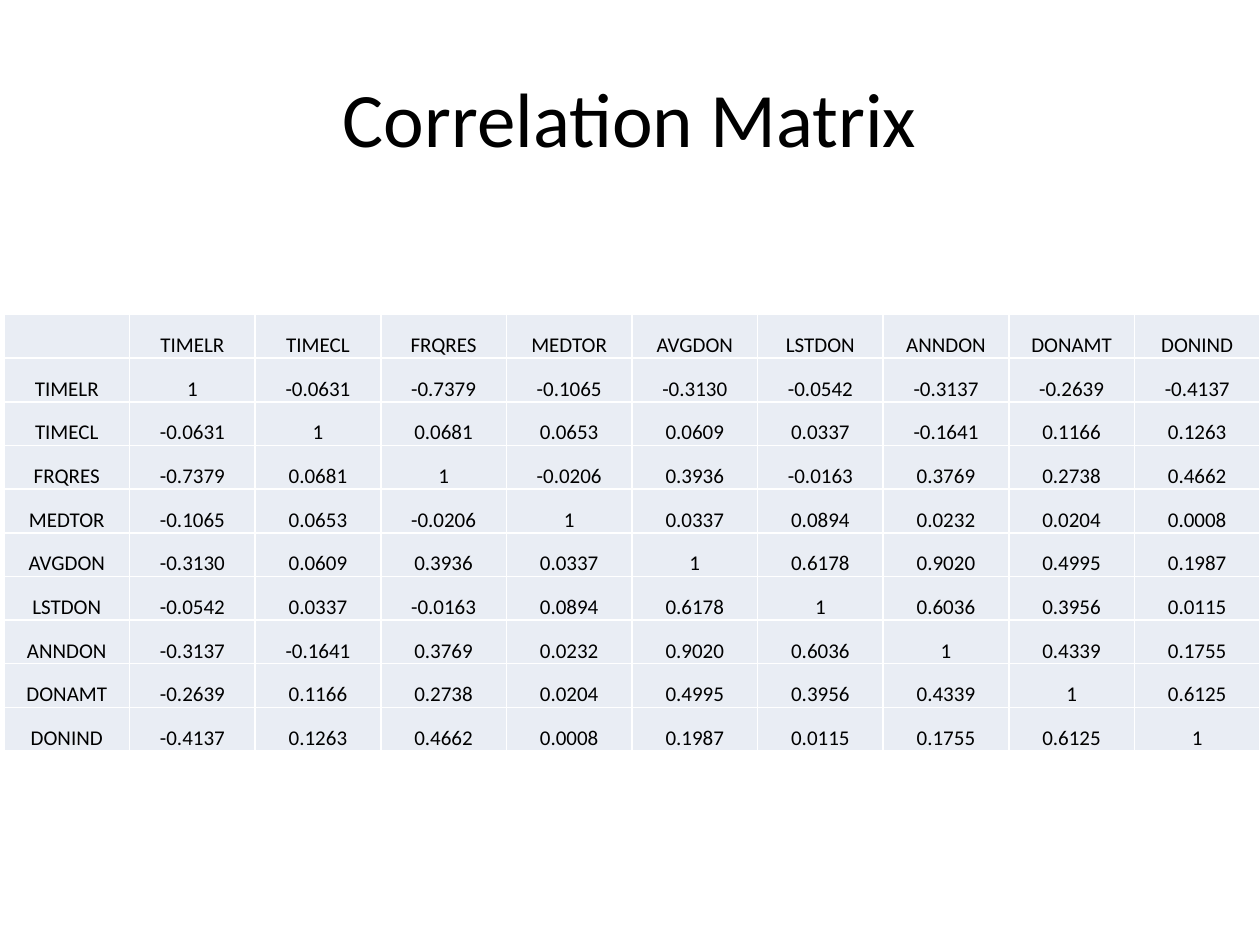
from dataclasses import dataclass

import pptx
import pptx.dml.color
import pptx.enum.text
import pptx.oxml
import pptx.oxml.ns
import pptx.util
from pptx.dml.color import RGBColor
from pptx.util import Cm

BLACK = RGBColor(0x00, 0x00, 0x00)
WHITE = RGBColor(0xFF, 0xFF, 0xFF)
PALE_BLUE = RGBColor(0xE9, 0xED, 0xF4)
CENTER = pptx.enum.text.PP_ALIGN.CENTER
ANCHOR = pptx.enum.text.MSO_ANCHOR

VARIABLES = ["TIMELR", "TIMECL", "FRQRES", "MEDTOR", "AVGDON",
             "LSTDON", "ANNDON", "DONAMT", "DONIND"]
# The matrix is symmetric, so only the lower triangle is listed.
LOWER_TRIANGLE = [
    "1",
    "-0.0631 1",
    "-0.7379 0.0681 1",
    "-0.1065 0.0653 -0.0206 1",
    "-0.3130 0.0609 0.3936 0.0337 1",
    "-0.0542 0.0337 -0.0163 0.0894 0.6178 1",
    "-0.3137 -0.1641 0.3769 0.0232 0.9020 0.6036 1",
    "-0.2639 0.1166 0.2738 0.0204 0.4995 0.3956 0.4339 1",
    "-0.4137 0.1263 0.4662 0.0008 0.1987 0.0115 0.1755 0.6125 1",
]

CELL_FORMAT = {
    "vertical_anchor": ANCHOR.BOTTOM,
    "margin_left": Cm(0.02),
    "margin_right": Cm(0.02),
    "margin_top": Cm(0.02),
    "margin_bottom": Cm(0),
}
TITLE_FORMAT = {"word_wrap": True, "vertical_anchor": ANCHOR.MIDDLE}


@dataclass(frozen=True)
class Area:
    left: Cm
    top: Cm
    width: Cm
    height: Cm

    def bounds(self) -> tuple:
        return self.left, self.top, self.width, self.height


TITLE_AREA = Area(Cm(1.27), Cm(0.76), Cm(22.86), Cm(3.18))
MATRIX_AREA = Area(Cm(0.08), Cm(6.34), Cm(25.32), Cm(8.8))


def apply_format(target, values: dict) -> None:
    for name, value in values.items():
        setattr(target, name, value)


def write_centered(frame, text: str, size: int) -> None:
    para = frame.paragraphs[0]
    para.alignment = CENTER
    if text:
        span = para.add_run()
        span.text = text
        apply_format(span.font, {"name": "Calibri", "size": pptx.util.Pt(size)})
        span.font.color.rgb = BLACK


def add_borders(cell, color: RGBColor, width: int) -> None:
    """Draw all four cell edges; the lines must come before the fill."""
    properties = cell._tc.get_or_add_tcPr()
    for index, edge in enumerate(("lnL", "lnR", "lnT", "lnB")):
        line = pptx.oxml.parse_xml(
            f'<a:{edge} {pptx.oxml.ns.nsdecls("a")} w="{width}"><a:solidFill>'
            f'<a:srgbClr val="{color}"/></a:solidFill></a:{edge}>')
        properties.insert(index, line)


def matrix_rows() -> list[list[str]]:
    """Mirror the triangle and add the variable names as headings."""
    lower = [line.split() for line in LOWER_TRIANGLE]
    count = len(VARIABLES)
    return [["", *VARIABLES]] + [
        [name] + [lower[max(row, col)][min(row, col)] for col in range(count)]
        for row, name in enumerate(VARIABLES)]


def add_title(page, area: Area, text: str) -> None:
    box = page.shapes.add_textbox(*area.bounds())
    apply_format(box.text_frame, TITLE_FORMAT)
    write_centered(box.text_frame, text, 44)


def add_matrix(page, area: Area, rows: list[list[str]]) -> None:
    table = page.shapes.add_table(len(rows), len(rows[0]), *area.bounds()).table
    apply_format(table, {"first_row": False, "horz_banding": False})
    for row, texts in enumerate(rows):
        for col, text in enumerate(texts):
            cell = table.cell(row, col)
            apply_format(cell, CELL_FORMAT)
            cell.fill.solid()
            cell.fill.fore_color.rgb = PALE_BLUE
            add_borders(cell, WHITE, pptx.util.Pt(1))
            write_centered(cell.text_frame, text, 12)


def main() -> None:
    deck = pptx.Presentation()
    apply_format(deck, {"slide_width": Cm(25.4), "slide_height": Cm(19.05)})
    page = deck.slides.add_slide(deck.slide_layouts[6])
    add_title(page, TITLE_AREA, "Correlation Matrix")
    add_matrix(page, MATRIX_AREA, matrix_rows())
    deck.save("out.pptx")


if __name__ == "__main__":
    main()
